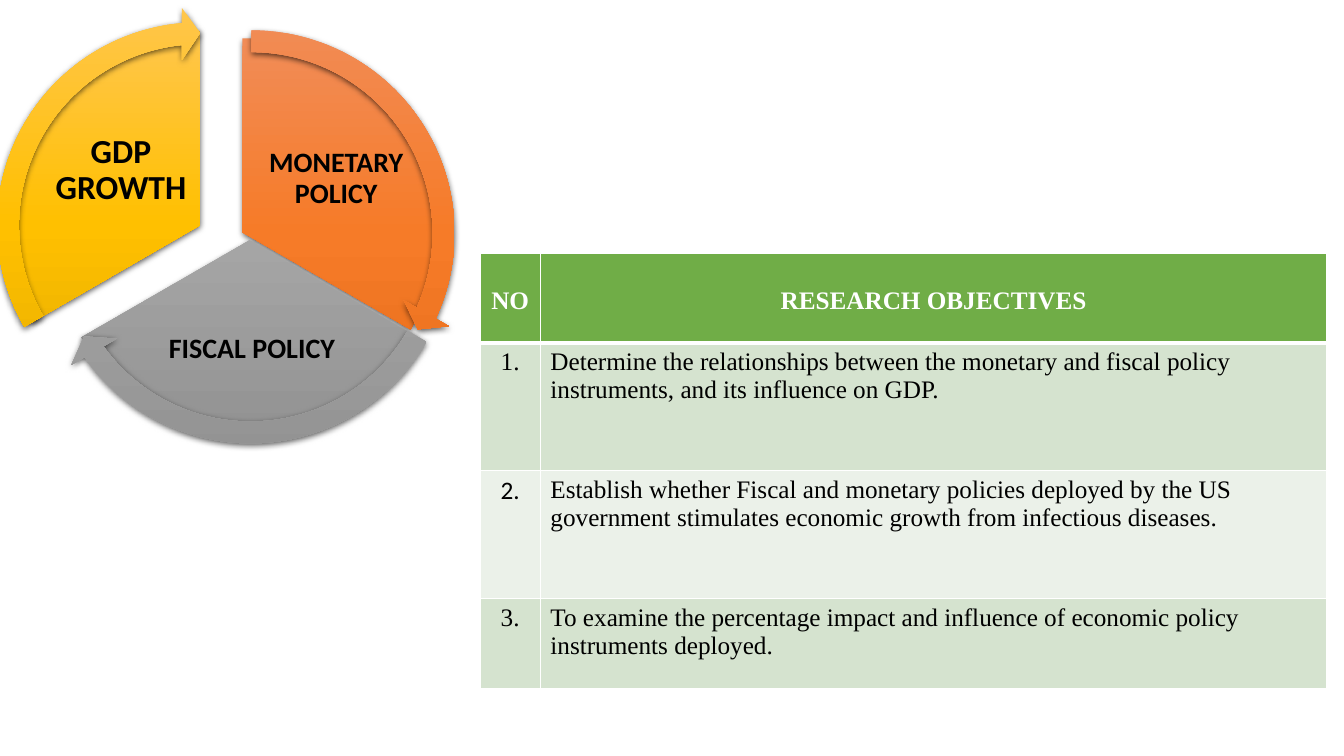
from copy import deepcopy
from dataclasses import dataclass

from lxml import etree
from pptx import Presentation
from pptx import util as u
from pptx.dml.color import RGBColor
from pptx.enum import shapes, text
from pptx.oxml import ns


@dataclass(frozen=True)
class Theme:
    ink: str = "000000"
    white: str = "FFFFFF"
    header: str = "70AD47"
    bands: tuple = ("D5E3CF", "EBF1E9")
    orange: tuple = ("F18C57", "F67B28", "E56C19")
    gray: tuple = ("AFAFAF", "A5A5A5", "939393")
    gold: tuple = ("FFC64B", "FFC000", "E3AB00")
    label_font: str = "Calibri"
    table_font: str = "Times New Roman"
    label_size: int = 20
    large_size: int = 24
    table_size: int = 18


def add_xml(parent, tag, **attributes):
    return etree.SubElement(parent, ns.qn(tag), attributes)


class PolicySlide:
    def __init__(self, deck, theme):
        self.theme = theme
        self.page = deck.slides.add_slide(deck.slide_layouts[6])
        self.cycle = self.page.shapes.add_group_shape()

    def style(self, para, font, size, color, bold=False, align=text.PP_ALIGN.CENTER):
        para.alignment = align
        para.font.name = font
        para.font.size = u.Pt(size)
        para.font.bold = bold
        para.font.color.rgb = RGBColor.from_string(color)

    def segment(self, preset, left, top, size, adjustments, colors):
        shape = self.cycle.shapes.add_shape(
            preset, u.Inches(left), u.Inches(top), u.Inches(size), u.Inches(size))
        for index, value in enumerate(adjustments):
            shape.adjustments[index] = value
        shape.line.fill.background()
        shape.fill.gradient()
        shape.fill.gradient_angle = 270
        properties = shape._element.spPr
        stops = properties.find(".//" + ns.qn("a:gsLst"))
        stops.insert(1, deepcopy(stops[0]))
        for stop, position, color in zip(shape.fill.gradient_stops, (0, 0.5, 1), colors):
            stop.position = position
            stop.color.rgb = RGBColor.from_string(color)
        shape.shadow.inherit = False
        shadow = add_xml(properties.find(ns.qn("a:effectLst")), "a:outerShdw",
                         blurRad=str(u.Pt(4.5)), dist=str(u.Pt(1.5)),
                         dir="5400000", algn="ctr", rotWithShape="0")
        color = add_xml(shadow, "a:srgbClr", val=self.theme.ink)
        add_xml(color, "a:alpha", val="63000")

    def label(self, words, left, top, width, height, size):
        box = self.cycle.shapes.add_textbox(
            u.Inches(left), u.Inches(top), u.Inches(width), u.Inches(height))
        frame = box.text_frame
        frame.word_wrap = True
        frame.vertical_anchor = text.MSO_ANCHOR.MIDDLE
        frame.margin_left = frame.margin_right = u.Inches(0.03)
        frame.margin_top = frame.margin_bottom = u.Inches(0.03)
        para = frame.paragraphs[0]
        para.text = words
        para.line_spacing = 0.9
        self.style(para, self.theme.label_font, size, self.theme.ink, bold=True)

    def borders(self, cell, widths):
        for side, width in widths.items():
            line = add_xml(cell._tc.get_or_add_tcPr(), f"a:ln{side}", w=str(u.Pt(width)))
            add_xml(add_xml(line, "a:solidFill"), "a:srgbClr", val=self.theme.white)

    def table(self, left, top, widths, heights, rows, number_fonts):
        theme = self.theme
        grid = self.page.shapes.add_table(
            len(rows), len(widths), u.Inches(left), u.Inches(top),
            u.Inches(sum(widths)), u.Inches(sum(heights))).table
        for column, width in zip(grid.columns, widths):
            column.width = u.Inches(width)
        for row, height in zip(grid.rows, heights):
            row.height = u.Inches(height)
        for row_index, row in enumerate(rows):
            header = row_index == 0
            for column_index, words in enumerate(row):
                cell = grid.cell(row_index, column_index)
                self.borders(cell, {"L": 1, "R": 1, "T": 3 if row_index == 1 else 1,
                                    "B": 3 if header else 1})
                cell.fill.solid()
                fill = theme.header if header else theme.bands[(row_index - 1) % 2]
                cell.fill.fore_color.rgb = RGBColor.from_string(fill)
                if header:
                    cell.margin_top = u.Inches(0.34)
                para = cell.text_frame.paragraphs[0]
                para.text = words
                numbered = column_index == 0
                self.style(
                    para, number_fonts[row_index] if numbered else theme.table_font,
                    theme.table_size, theme.white if header else theme.ink, header,
                    text.PP_ALIGN.CENTER if header or numbered else text.PP_ALIGN.LEFT)


def main():
    deck = Presentation()
    deck.slide_width, deck.slide_height = u.Inches(13.33), u.Inches(7.5)
    theme = Theme()
    slide = PolicySlide(deck, theme)

    wedges = [
        (0.48, 0.38, (162, 18), theme.orange,
         ("MONETARY POLICY", 2.61, 1.2, 1.45, 1.15, theme.label_size)),
        (0.55, 0.46, (18, 90), theme.gray,
         ("FISCAL POLICY", 1.47, 2.96, 2.06, 1.01, theme.label_size)),
        (0.06, 0.31, (90, 162), theme.gold,
         ("GDP GROWTH", 0.51, 1.12, 1.38, 1.15, theme.large_size)),
    ]
    for left, top, angles, colors, label in wedges:
        slide.segment(shapes.MSO_SHAPE.PIE, left, top, 3.85, angles, colors)
        slide.label(*label)

    arrows = [
        (0.33, 0.15, 14.73, 161.99, theme.orange),
        (0.32, 0.22, 86.72, 18, theme.gray),
        (-0.18, 0.07, 158.73, 90, theme.gold),
    ]
    for left, top, end, start, colors in arrows:
        slide.segment(shapes.MSO_SHAPE.CIRCULAR_ARROW, left, top, 4.33,
                      (0.05, 3.28, end, start, 0.06), colors)

    objectives = [
        ("NO", "RESEARCH OBJECTIVES"),
        ("1.", "Determine the relationships between the monetary and fiscal policy "
               "instruments, and its influence on GDP."),
        ("2.", "Establish whether Fiscal and monetary policies deployed by the US "
               "government stimulates economic growth from infectious diseases."),
        ("3.", "To examine the percentage impact and influence of economic policy "
               "instruments deployed."),
    ]
    number_fonts = (theme.table_font, theme.table_font, theme.label_font, theme.table_font)
    slide.table(4.76, 2.51, (0.6, 7.8), (0.89, 1.27, 1.27, 0.89), objectives, number_fonts)
    deck.save("out.pptx")


if __name__ == "__main__":
    main()
